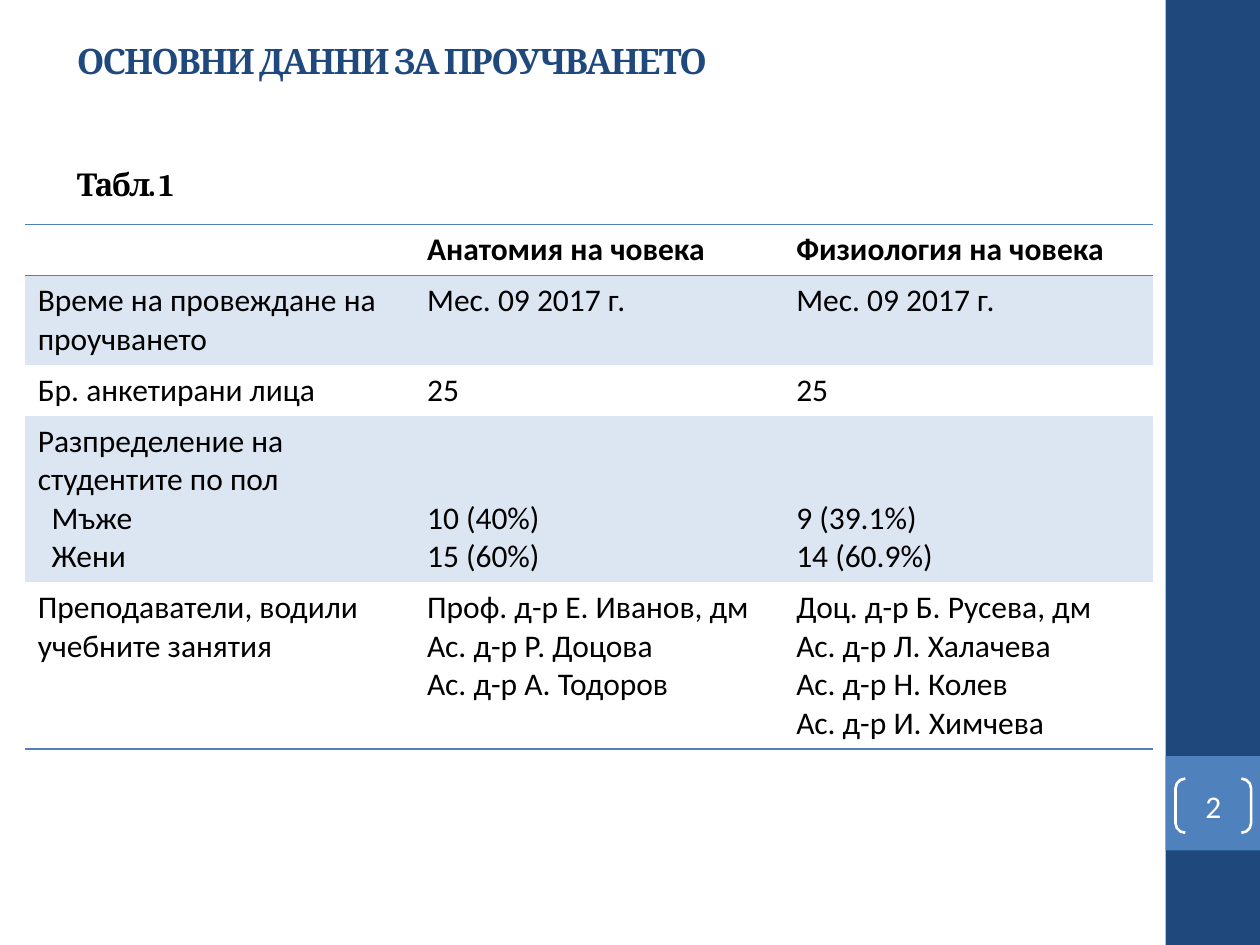
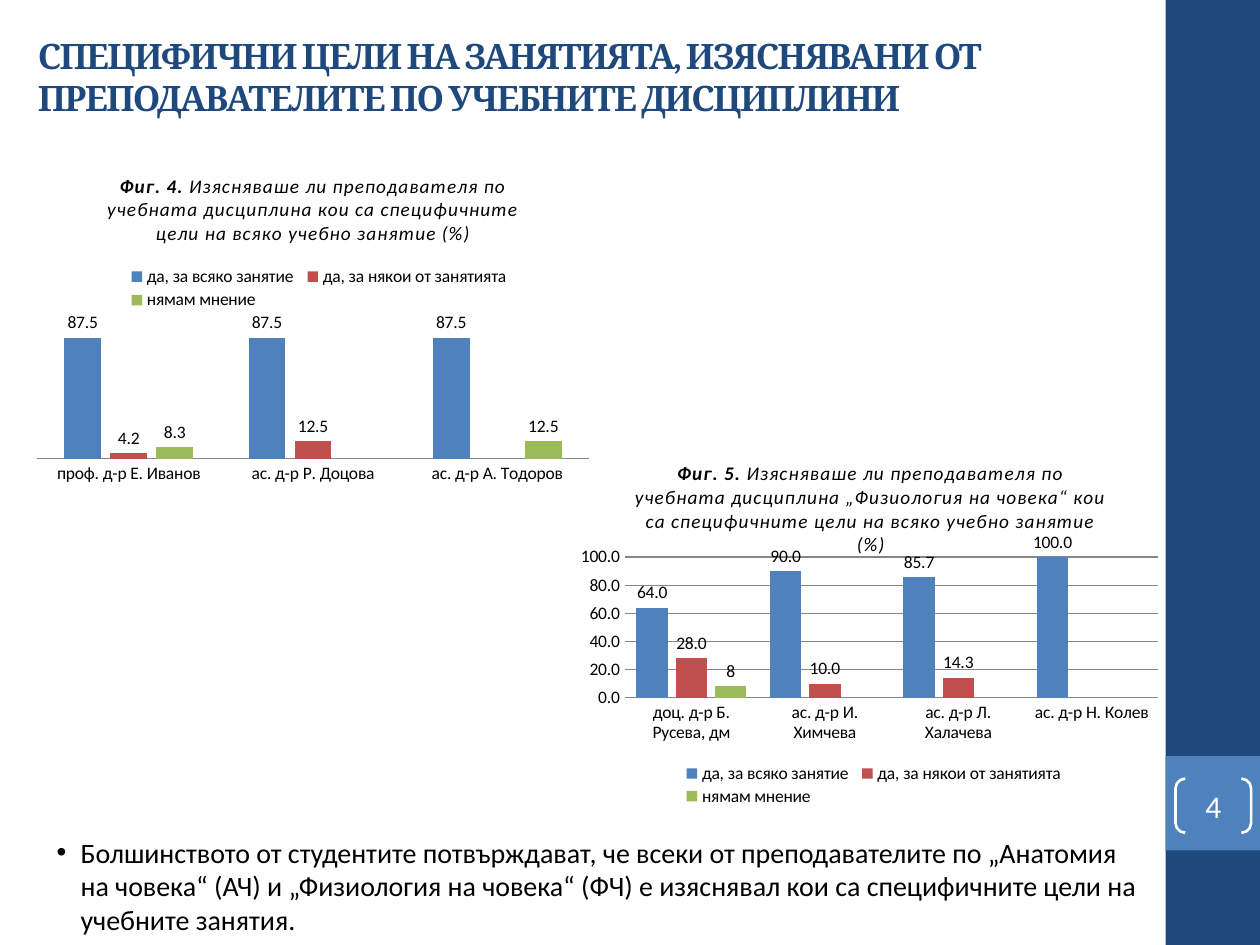
from dataclasses import dataclass

from lxml import etree
from pptx import Presentation
from pptx.chart.data import CategoryChartData
from pptx.dml.color import RGBColor
from pptx.enum.chart import XL_CHART_TYPE, XL_LABEL_POSITION, XL_LEGEND_POSITION, XL_TICK_MARK
from pptx.enum.shapes import MSO_SHAPE
from pptx.enum.text import MSO_ANCHOR, MSO_AUTO_SIZE, PP_ALIGN
from pptx.oxml.ns import qn
from pptx.util import Inches, Pt

COLUMNS = XL_CHART_TYPE.COLUMN_CLUSTERED
OUTSIDE = XL_LABEL_POSITION.OUTSIDE_END
LEGEND_TOP, LEGEND_BOTTOM = XL_LEGEND_POSITION.TOP, XL_LEGEND_POSITION.BOTTOM
NO_TICK = XL_TICK_MARK.NONE
RECTANGLE, BRACKETS = MSO_SHAPE.RECTANGLE, MSO_SHAPE.DOUBLE_BRACKET
TOP, MIDDLE, BOTTOM = MSO_ANCHOR.TOP, MSO_ANCHOR.MIDDLE, MSO_ANCHOR.BOTTOM
LEFT, CENTER = PP_ALIGN.LEFT, PP_ALIGN.CENTER
NO_FIT = MSO_AUTO_SIZE.NONE


@dataclass(frozen=True)
class Theme:
    navy: str = "1F497D"
    blue: str = "4F81BD"
    red: str = "C0504D"
    green: str = "9BBB59"
    pale: str = "DCE6F2"
    grey: str = "868686"
    black: str = "000000"
    white: str = "FFFFFF"
    heading_font: str = "Cambria"
    body_font: str = "Calibri"
    title_size: int = 20
    text_size: int = 18
    list_size: int = 16
    caption_size: int = 11
    chart_size: int = 10


THEME = Theme()
NO_STYLE = "{2D5ABB26-0587-4C30-8999-92F81FD0307C}"
ONE_DECIMAL = "0.0;[Red]0.0"

BANDS = [((9.25, 0, 0.75, 7.5), THEME.navy), ((9.25, 6, 0.75, 0.75), THEME.blue)]
NUMBER_PLACE = (9.33, 6.18, 0.6, 0.43)

SURVEY_TITLE = "ОСНОВНИ ДАННИ ЗА ПРОУЧВАНЕТО"
TABLE_CAPTION = "Табл. 1"
TABLE_PLACE = (0.2, 1.78, 8.95, 4.11)
COLUMN_WIDTHS = (3.09, 2.93, 2.93)
ROW_HEIGHTS = (0.4, 0.7, 0.4, 1.29, 1.29)
GENDER_ROW = 3
SURVEY_ROWS = [
    ([], ["Анатомия на човека"], ["Физиология на човека"]),
    (["Време на провеждане на проучването"], ["Мес. 09 2017 г."], ["Мес. 09 2017 г."]),
    (["Бр. анкетирани лица"], ["25"], ["25"]),
    (["Разпределение на студентите по пол", "Мъже", "Жени"],
     ["10 (40%)", "15 (60%)"], ["9 (39.1%)", "14 (60.9%)"]),
    (["Преподаватели, водили учебните занятия"],
     ["Проф. д-р Е. Иванов, дм Ас. д-р Р. Доцова", "Ас. д-р А. Тодоров"],
     ["Доц. д-р Б. Русева, дм", "Ас. д-р Л. Халачева", "Ас. д-р Н. Колев", "Ас. д-р И. Химчева"]),
]

GOALS_TITLE = "СПЕЦИФИЧНИ ЦЕЛИ НА ЗАНЯТИЯТА, ИЗЯСНЯВАНИ ОТ ПРЕПОДАВАТЕЛИТЕ ПО УЧЕБНИТЕ ДИСЦИПЛИНИ"
GOALS_SUMMARY = ("Болшинството от студентите потвърждават, че всеки от преподавателите по "
                 "„Анатомия на човека“ (АЧ) и „Физиология на човека“ (ФЧ) е изяснявал кои са "
                 "специфичните цели на учебните занятия.")
ANSWERS = [
    ("да, за всяко занятие", THEME.blue, ONE_DECIMAL),
    ("да, за някои от занятията", THEME.red, ONE_DECIMAL),
    ("нямам мнение", THEME.green, "General"),
]
CHARTS = [
    dict(place=(4.53, 3.51, 4.76, 2.94), figure="Фиг. 5.",
         question=" Изясняваше ли преподавателя по учебната дисциплина „Физиология на човека“ "
                  "кои са специфичните цели на всяко учебно занятие (%)",
         teachers=["доц. д-р Б. Русева, дм", "ас. д-р И. Химчева",
                   "ас. д-р Л. Халачева", "ас. д-р Н. Колев"],
         values=[(64, 90, 85.7, 100), (28, 10, 14.3, None), (8, None, None, None)],
         gap=75, scale=True, legend=LEGEND_BOTTOM,
         plot_area=(0.09, 0.31, 0.89, 0.38), legend_area=(0.18, 0.86, 0.65, 0.13)),
    dict(place=(0.2, 1.23, 4.57, 2.68), figure="Фиг. 4.",
         question=" Изясняваше ли преподавателя по учебната дисциплина кои са "
                  "специфичните цели на всяко учебно занятие (%)",
         teachers=["проф. д-р Е. Иванов", "ас. д-р Р. Доцова", "ас. д-р А. Тодоров"],
         values=[(87.5, 87.5, 87.5), (4.2, 12.5, None), (8.3, None, 12.5)],
         gap=150, scale=False, legend=LEGEND_TOP,
         plot_area=(0.02, 0.49, 0.96, 0.41), legend_area=(0.17, 0.32, 0.68, 0.15)),
]


def assign(target, **values):
    for name, value in values.items():
        setattr(target, name, value)


def inches(place):
    return [Inches(value) for value in place]


def move(shape, place):
    assign(shape, **dict(zip(("left", "top", "width", "height"), inches(place))))


def style_font(font, size, color=THEME.black, name=THEME.body_font, **extra):
    assign(font, size=Pt(size), name=name, **extra)
    font.color.rgb = RGBColor.from_string(color)


def add_span(para, text, size, spacing=None, **style):
    span = para.add_run()
    span.text = text
    style_font(span.font, size, **style)
    if spacing is not None:
        span._r.get_or_add_rPr().set("spc", str(spacing))


def add_flat_shape(slide, kind, place):
    shape = slide.shapes.add_shape(kind, *inches(place))
    shape.shadow.inherit = False
    return shape


def add_master_bands(deck, slide):
    tree = deck.slide_master.element.cSld.spTree
    for order, (place, color) in enumerate(BANDS):
        band = add_flat_shape(slide, RECTANGLE, place)
        band.fill.solid()
        band.fill.fore_color.rgb = RGBColor.from_string(color)
        band.line.fill.background()
        band.element.nvSpPr.cNvPr.set("id", str(101 + order))
        tree.insert(2 + order, band.element)


def add_title(slide, text, place):
    title = slide.shapes.title
    move(title, place)
    frame = title.text_frame
    assign(frame, word_wrap=True, auto_size=NO_FIT, vertical_anchor=MIDDLE)
    para = frame.paragraphs[0]
    para.alignment = LEFT
    add_span(para, text, THEME.title_size, -100, color=THEME.navy,
             name=THEME.heading_font, bold=True)
    return frame


def add_page_number(slide, number):
    box = add_flat_shape(slide, BRACKETS, NUMBER_PLACE)
    box.adjustments[0] = 0.18
    box.fill.background()
    box.line.color.rgb = RGBColor.from_string(THEME.white)
    box.line.width = Pt(1.5)
    frame = box.text_frame
    assign(frame, margin_left=0, margin_top=0, margin_right=0, margin_bottom=0,
           vertical_anchor=MIDDLE)
    para = frame.paragraphs[0]
    para.alignment = CENTER
    add_span(para, str(number), THEME.text_size, color=THEME.white)


def add_border(cell, side):
    border = etree.Element(qn(f"a:{side}"), w=str(Pt(1)))
    fill = etree.SubElement(border, qn("a:solidFill"))
    etree.SubElement(fill, qn("a:srgbClr"), val=THEME.blue)
    cell._tc.get_or_add_tcPr().insert(0, border)


def fill_cell(cell, lines, row, column):
    if row % 2:
        cell.fill.solid()
        cell.fill.fore_color.rgb = RGBColor.from_string(THEME.pale)
    else:
        cell.fill.background()
    if row in (0, len(SURVEY_ROWS) - 1):
        add_border(cell, "lnB")
    if row == 0:
        add_border(cell, "lnT")
    cell.vertical_anchor = BOTTOM if row == GENDER_ROW and column else TOP
    frame = cell.text_frame
    for index, line in enumerate(lines):
        para = frame.add_paragraph() if index else frame.paragraphs[0]
        add_span(para, line, THEME.text_size, bold=row == 0)
        if index and column == 0:
            para._p.get_or_add_pPr().set("marL", str(Inches(0.11)))


def add_survey_table(slide):
    frame = slide.shapes.add_table(len(ROW_HEIGHTS), len(COLUMN_WIDTHS), *inches(TABLE_PLACE))
    table = frame.table
    assign(table, first_row=False, horz_banding=False)
    table._tbl.tblPr.find(qn("a:tableStyleId")).text = NO_STYLE
    for column, width in zip(table.columns, COLUMN_WIDTHS):
        column.width = Inches(width)
    for row, height in zip(table.rows, ROW_HEIGHTS):
        row.height = Inches(height)
    for row, cells in enumerate(SURVEY_ROWS):
        for column, lines in enumerate(cells):
            fill_cell(table.cell(row, column), lines, row, column)


def set_layout(host, index, area, inner=False):
    present = host.find(qn("c:layout"))
    if present is not None:
        host.remove(present)
    layout = etree.Element(qn("c:layout"))
    manual = etree.SubElement(layout, qn("c:manualLayout"))
    settings = [("layoutTarget", "inner")] if inner else []
    settings += [("xMode", "edge"), ("yMode", "edge"), *zip("xywh", area)]
    for name, value in settings:
        etree.SubElement(manual, qn(f"c:{name}"), val=str(value))
    host.insert(index, layout)


def style_axes(chart, scale):
    values, teachers = chart.value_axis, chart.category_axis
    assign(values, maximum_scale=100, minimum_scale=0, major_unit=20, visible=scale,
           has_major_gridlines=scale, major_tick_mark=NO_TICK, minor_tick_mark=NO_TICK)
    assign(values.tick_labels, number_format=ONE_DECIMAL, number_format_is_linked=False)
    values.format.line.fill.background()
    assign(teachers, major_tick_mark=NO_TICK, minor_tick_mark=NO_TICK)
    lines = [teachers.format.line] + ([values.major_gridlines.format.line] if scale else [])
    for line in lines:
        line.color.rgb = RGBColor.from_string(THEME.grey)
        line.width = Pt(0.75)


def add_goal_chart(slide, place, figure, question, teachers, values, gap, scale,
                   legend, plot_area, legend_area):
    data = CategoryChartData()
    data.categories = teachers
    for (answer, _, _), shares in zip(ANSWERS, values):
        data.add_series(answer, shares)
    chart = slide.shapes.add_chart(COLUMNS, *inches(place), data).chart
    style_font(chart.font, THEME.chart_size)
    chart.has_title = True
    para = chart.chart_title.text_frame.paragraphs[0]
    for text, bold in ((figure, True), (question, False)):
        add_span(para, text, THEME.caption_size, 50, bold=bold, italic=True)
    chart.has_legend = True
    assign(chart.legend, position=legend, include_in_layout=False)
    style_axes(chart, scale)
    plot = chart.plots[0]
    assign(plot, gap_width=gap, overlap=-25, vary_by_categories=False)
    for series, (_, color, number_format) in zip(plot.series, ANSWERS):
        series.format.fill.solid()
        series.format.fill.fore_color.rgb = RGBColor.from_string(color)
        assign(series.data_labels, show_value=True, position=OUTSIDE,
               number_format=number_format, number_format_is_linked=False)
    root = chart.element
    set_layout(root.xpath("c:chart/c:plotArea")[0], 0, plot_area, inner=True)
    set_layout(root.xpath("c:chart/c:legend")[0], 1, legend_area)


def add_summary(slide):
    body = slide.placeholders[1]
    move(body, (0.35, 6.58, 8.82, 0.87))
    frame = body.text_frame
    assign(frame, word_wrap=True, auto_size=NO_FIT, vertical_anchor=TOP)
    para = frame.paragraphs[0]
    assign(para, space_before=Pt(0), space_after=Pt(10))
    properties = para._p.get_or_add_pPr()
    properties.set("marL", str(Inches(0.19)))
    properties.set("indent", str(Inches(-0.19)))
    etree.SubElement(properties, qn("a:buChar"), char="•")
    add_span(para, GOALS_SUMMARY, THEME.list_size)


def build_survey_slide(deck):
    slide = deck.slides.add_slide(deck.slide_layouts[5])
    add_master_bands(deck, slide)
    frame = add_title(slide, SURVEY_TITLE, (0.51, 0.3, 8.32, 1.32))
    caption = frame.add_paragraph()
    assign(caption, alignment=LEFT, space_before=Pt(48))
    add_span(caption, TABLE_CAPTION, THEME.text_size, -100, name=THEME.heading_font, bold=True)
    add_page_number(slide, 2)
    add_survey_table(slide)


def build_goals_slide(deck):
    slide = deck.slides.add_slide(deck.slide_layouts[1])
    add_title(slide, GOALS_TITLE, (0.2, 0.21, 8.9, 0.79))
    add_page_number(slide, 4)
    add_summary(slide)
    for chart in CHARTS:
        add_goal_chart(slide, **chart)


def main():
    deck = Presentation()
    assign(deck, slide_width=Inches(10), slide_height=Inches(7.5))
    build_survey_slide(deck)
    build_goals_slide(deck)
    deck.save("out.pptx")


if __name__ == "__main__":
    main()
